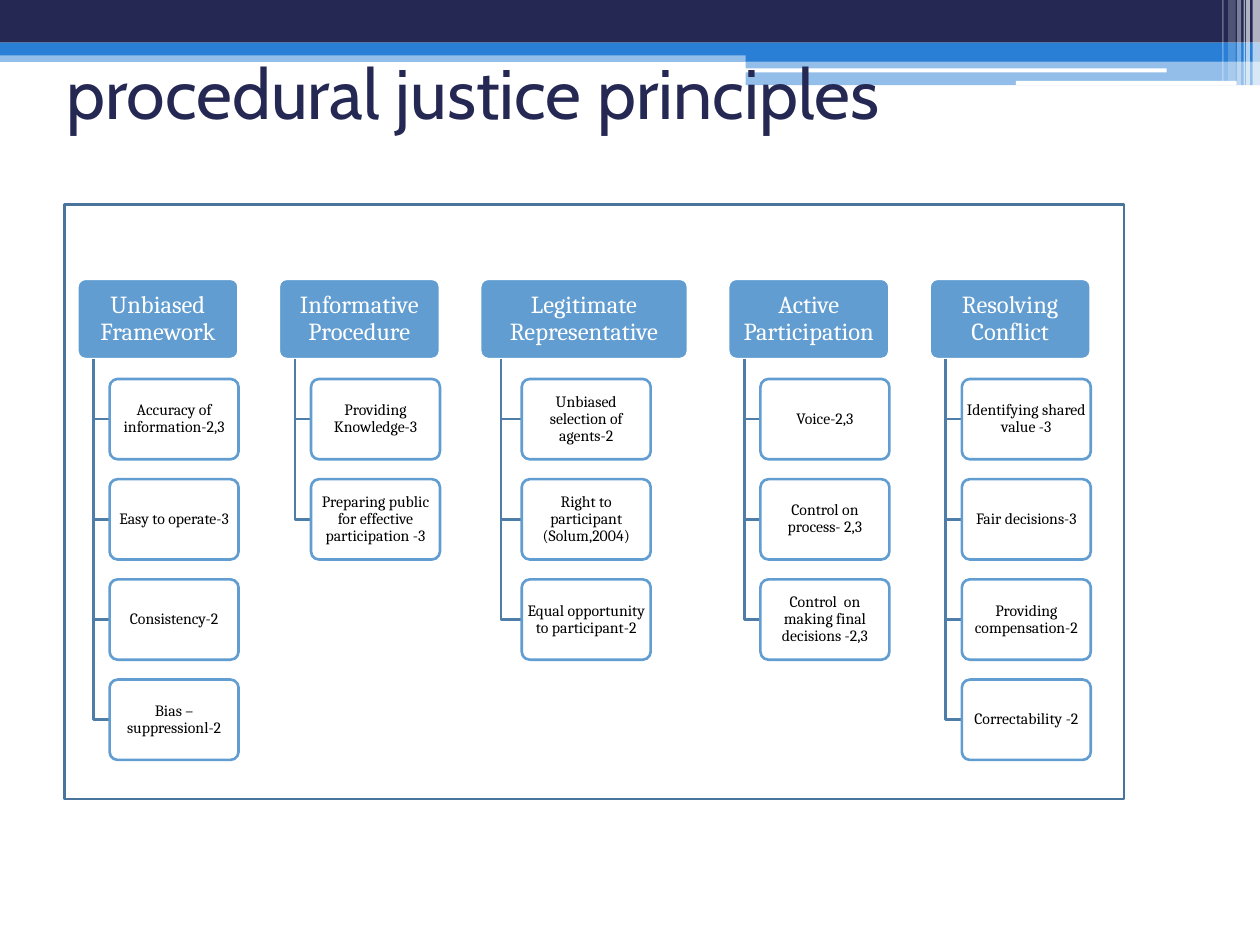
from dataclasses import dataclass

from lxml.etree import SubElement
from pptx import Presentation
from pptx.dml.color import RGBColor
from pptx.enum.shapes import MSO_SHAPE
from pptx.enum.text import MSO_ANCHOR, PP_ALIGN
from pptx.oxml.ns import qn
from pptx.util import Cm, Pt


@dataclass(frozen=True)
class Theme:
    """Colours, fonts and sizes of the slide."""
    navy: str = "242852"
    blue: str = "297FD5"
    sky: str = "629DD1"
    elbow: str = "4E7EA7"
    frame: str = "49749B"
    white: str = "FFFFFF"
    black: str = "000000"
    title_font: str = "Cabin"
    body_font: str = "Cambria"
    title_size: float = 40
    head_size: float = 14
    card_size: float = 9
    line: float = 1.5


T = Theme()
BOX_H, BOX_GAP, CARD_W, COLUMN_GAP = 1.62, 0.4, 2.6, 0.81
PRINCIPLES = [
    ("Unbiased Framework", 3.25,
     ["Accuracy of information-2,3", "Easy to operate-3", "Consistency-2",
      "Bias –suppressionl-2"]),
    ("Informative Procedure", 3.25,
     ["Providing Knowledge-3",
      "Preparing public for effective participation -3"]),
    ("Legitimate Representative", 4.19,
     ["Unbiased selection of agents-2", "Right to participant (Solum,2004)",
      "Equal opportunity to participant-2"]),
    ("Active Participation", 3.25,
     ["Voice-2,3", "Control on process- 2,3",
      "Control  on making final decisions -2,3"]),
    ("Resolving Conflict", 3.25,
     ["Identifying shared value -3", "Fair decisions-3",
      "Providing compensation-2", "Correctability -2"]),
]


def rgb(color):
    """Turn a hex string into a colour."""
    return RGBColor.from_string(color)


def style(sp, fill=None, line=None, alpha=100):
    """Set fill, opacity in percent and outline, without shadow."""
    sp.shadow.inherit = False
    if fill:
        sp.fill.solid()
        sp.fill.fore_color.rgb = rgb(fill)
        if alpha < 100:
            clr = sp.fill._xPr.find(qn("a:solidFill"))[0]
            SubElement(clr, qn("a:alpha"), val=str(alpha * 1000))
    else:
        sp.fill.background()
    if line:
        sp.line.color.rgb = rgb(line)
        sp.line.width = Pt(T.line)
    else:
        sp.line.fill.background()


def add_box(s, x, y, w, h, kind=MSO_SHAPE.RECTANGLE, adj=0.1, **look):
    """Add a styled rectangle, plain or rounded."""
    sp = s.shapes.add_shape(kind, Cm(x), Cm(y), Cm(w), Cm(h))
    if kind == MSO_SHAPE.ROUNDED_RECTANGLE:
        sp.adjustments[0] = adj
    style(sp, **look)
    return sp


def write(sp, text, font, size, color, inset, align=PP_ALIGN.CENTER):
    """Write one wrapped, vertically centred paragraph."""
    tf = sp.text_frame
    tf.word_wrap = True
    tf.vertical_anchor = MSO_ANCHOR.MIDDLE
    tf.margin_left = tf.margin_right = Cm(inset)
    tf.margin_top = tf.margin_bottom = Cm(inset / 2)
    p = tf.paragraphs[0]
    p.text = text
    p.alignment = align
    r = p.runs[0]
    r.font.name, r.font.size = font, Pt(size)
    r.font.color.rgb = rgb(color)


def add_banner(s, x, y, w):
    """Draw the layered bands and the pale stripes at their right end."""
    step = x + 15.03
    bands = [(x, 1.02, w, 0.23, T.blue, 50), (x, 0, w, 0.86, T.navy, 100),
             (x, 0.86, w, 0.26, T.blue, 100),
             (step, 0.99, w - 15.03, 0.25, T.blue, 100),
             (step, 1.22, w - 15.03, 0.5, T.blue, 50)]
    for left, top, width, height, fill, alpha in bands:
        add_box(s, left, y + top, width, height, fill=fill, alpha=alpha)
    for left, top, width, height in [(15.01, 1.38, 8.51, 0.08),
                                     (20.48, 1.63, 4.45, 0.09)]:
        add_box(s, x + left, y + top, width, height,
                MSO_SHAPE.ROUNDED_RECTANGLE, 0.17, fill=T.white)
    stripes = [(0.15, 0.15, 1.73, 65), (0.28, 0.08, 1.73, 65),
               (0.33, 0.03, 1.73, 60), (0.46, 0.08, 1.73, 40),
               (0.64, 0.15, 1.63, 20), (0.76, 0.03, 1.63, 30)]
    for from_right, width, height, alpha in stripes:
        add_box(s, x + w - from_right, y, width, height,
                fill=T.white, alpha=alpha)


def add_title(s, x, y, w, h):
    """Place the slide title."""
    sp = s.shapes.add_textbox(Cm(x), Cm(y), Cm(w), Cm(h))
    write(sp, "procedural justice principles", T.title_font, T.title_size,
          T.navy, 0.25, PP_ALIGN.LEFT)


def add_elbow(s, x, top, right, bottom):
    """Draw a line down from a header and across to a card."""
    fb = s.shapes.build_freeform(Cm(x), Cm(top))
    fb.add_line_segments([(Cm(x), Cm(bottom)), (Cm(right), Cm(bottom))],
                         close=False)
    style(fb.convert_to_shape(), line=T.elbow)


def add_column(s, x, y, w, heading, cards):
    """Place a header with its cards hanging below it."""
    rounded = MSO_SHAPE.ROUNDED_RECTANGLE
    sp = add_box(s, x, y, w, BOX_H, rounded, fill=T.sky, line=T.white)
    write(sp, heading, T.body_font, T.head_size, T.white, 0.07)
    sp.text_frame.paragraphs[0].line_spacing = 0.9
    card_x = x + 0.2 * w
    for i, text in enumerate(cards, 1):
        card_y = y + i * (BOX_H + BOX_GAP)
        add_elbow(s, x + 0.1 * w, y + BOX_H, card_x, card_y + BOX_H / 2)
        sp = add_box(s, card_x, card_y, CARD_W, BOX_H, rounded,
                     fill=T.white, alpha=90, line=T.sky)
        write(sp, text, T.body_font, T.card_size, T.black, 0.05)
        sp.text_frame.paragraphs[0].line_spacing = 0.9


def add_diagram(s, x, y, w, h):
    """Place the framed row of principle columns."""
    add_box(s, x, y, w, h, line=T.frame)
    left = x + 0.26
    for heading, width, cards in PRINCIPLES:
        add_column(s, left, y + 1.5, width, heading, cards)
        left += width + COLUMN_GAP


def main():
    """Build and save the slide."""
    prs = Presentation()
    prs.slide_width, prs.slide_height = Cm(25.4), Cm(19.05)
    s = prs.slides.add_slide(prs.slide_layouts[6])
    add_banner(s, 0, 0, 25.4)
    add_title(s, 1.09, 0.36, 22.86, 2.97)
    add_diagram(s, 1.3, 4.12, 21.36, 11.99)
    prs.save("out.pptx")


if __name__ == "__main__":
    main()
